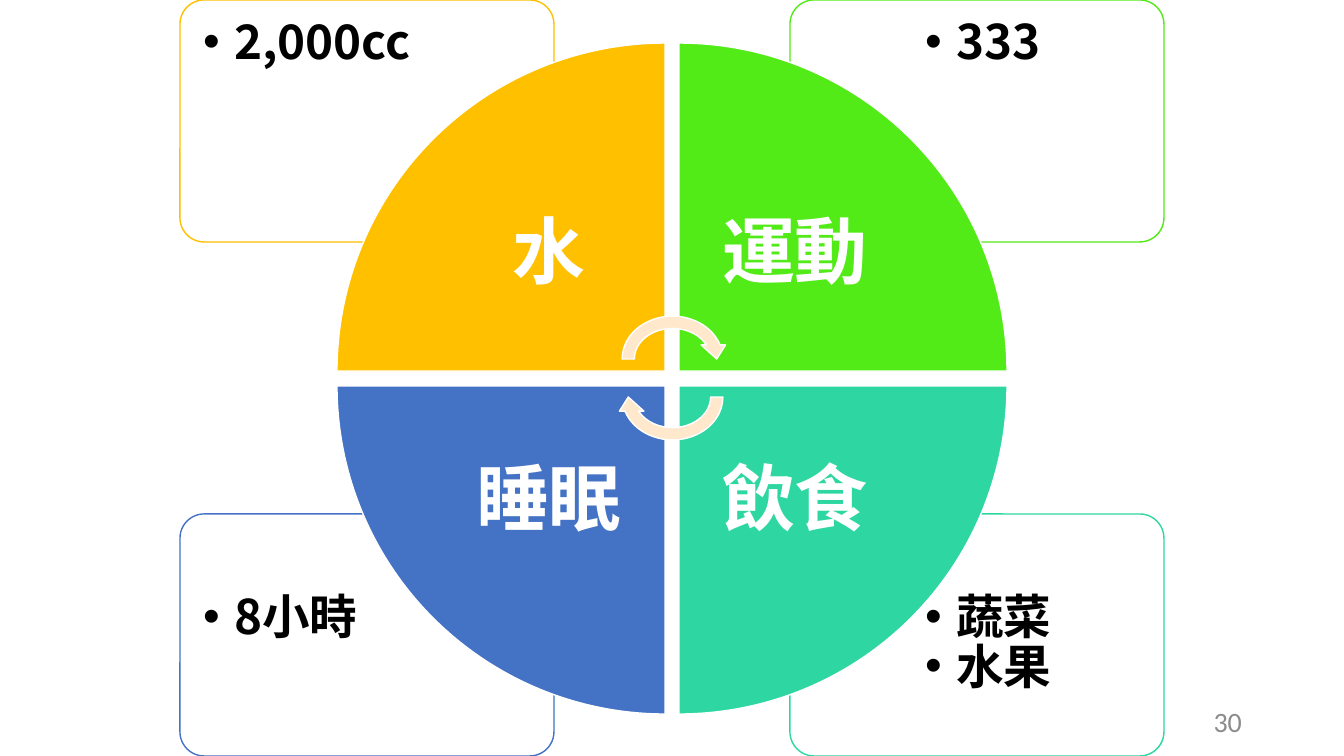
"""Build a slide of four health habits around a wheel."""
import pptx
import pptx.util
import pptx.dml.color
import pptx.enum.shapes
import pptx.enum.text
import pptx.oxml.ns
import lxml.etree

PX = 9144000 / 1008
FONT = "Noto Sans CJK SC"
HUES = {
    "gold": "FFC000",
    "lime": "53EB17",
    "mint": "2ED7A1",
    "blue": "4472C4",
    "cream": "FFE8CC",
    "white": "FFFFFF",
    "black": "000000",
    "gray": "8C8C8C",
}
HABITS = [
    ("水", ["2,000cc"], "gold", 0, 0, 0),
    ("運動", ["333"], "lime", 1, 0, 90),
    ("飲食", ["蔬菜", "水果"], "mint", 1, 1, 180),
    ("睡眠", ["8小時"], "blue", 0, 1, 270),
]
KINDS = pptx.enum.shapes.MSO_SHAPE
ALIGN = pptx.enum.text.PP_ALIGN
ANCHOR = pptx.enum.text.MSO_ANCHOR


def emu(px):
    """Turn px into EMU."""
    return pptx.util.Emu(round(px * PX))


def tint(hue):
    """Give the colour for a name."""
    return pptx.dml.color.RGBColor.from_string(HUES[hue])


def add_sub(parent, tag, **attrs):
    """Add a drawing element below a parent."""
    return lxml.etree.SubElement(parent, pptx.oxml.ns.qn(tag), attrs)


def add_form(slide, kind, box, fill, line, turn=0):
    """Add a flat preset shape."""
    form = slide.shapes.add_shape(kind, *map(emu, box))
    form.shadow.inherit = False
    form.fill.solid()
    form.fill.fore_color.rgb = tint(fill)
    form.line.color.rgb = tint(line)
    form.line.width = pptx.util.Pt(1)
    form.rotation = turn
    return form


def add_text(slide, box, lines, size, hue, font=FONT, bold=True, align=ALIGN.LEFT,
             anchor=ANCHOR.TOP, inset=(10, 5), space=1.0, after=0, dots=False):
    """Add a text box with one paragraph a line."""
    frame = slide.shapes.add_textbox(*map(emu, box)).text_frame
    frame.word_wrap = True
    frame.vertical_anchor = anchor
    frame.margin_left = frame.margin_right = emu(inset[0])
    frame.margin_top = frame.margin_bottom = emu(inset[1])
    for i, line in enumerate(lines):
        para = frame.paragraphs[0] if i == 0 else frame.add_paragraph()
        if dots:
            props = para._p.get_or_add_pPr()
            props.set("marL", str(emu(31)))
            props.set("indent", str(-emu(31)))
            add_sub(props, "a:buFont", typeface="Arial")
            add_sub(props, "a:buChar", char="•")
        para.alignment = align
        para.line_spacing = space
        para.space_after = pptx.util.Pt(after)
        run = para.add_run()
        run.text = line
        run.font.size = pptx.util.Pt(size)
        run.font.bold = bold
        run.font.color.rgb = tint(hue)
        run.font.name = font
        add_sub(run._r.get_or_add_rPr(), "a:ea", typeface=font)


def add_card(slide, notes, hue, col, row):
    """Add a corner card and its bullets."""
    box = (180 + 610 * col, 514 * row, 374, 242)
    card = add_form(slide, KINDS.ROUNDED_RECTANGLE, box, "white", hue)
    card.adjustments[0] = 0.1
    fill = card._element.spPr.find(pptx.oxml.ns.qn("a:solidFill"))
    add_sub(fill[0], "a:alpha", val="90000")
    add_text(slide, (185 + 722 * col, 5 + 575 * row, 251, 170), notes, 34, "black",
             inset=(18, 18), space=0.81, after=2, dots=True)


def add_wedge(slide, name, hue, col, row, turn):
    """Add a quarter of the wheel and its name."""
    box = (337 + 342 * col, 43 + 343 * row, 328, 328)
    add_form(slide, KINDS.PIE_WEDGE, box, hue, "white", turn)
    add_text(slide, (433 + 246 * col, 139 + 247 * row, 232, 232), [name], 52, "white",
             align=ALIGN.CENTER, anchor=ANCHOR.MIDDLE, inset=(40, 40), space=0.9)


def main():
    """Build and save the slide."""
    deck = pptx.Presentation()
    deck.slide_width, deck.slide_height = emu(1344), emu(756)
    slide = deck.slides.add_slide(deck.slide_layouts[6])
    for name, notes, hue, col, row, turn in reversed(HABITS):
        add_card(slide, notes, hue, col, row)
    for name, notes, hue, col, row, turn in HABITS:
        add_wedge(slide, name, hue, col, row, turn)
    for top, turn in ((310, 0), (348, 180)):
        add_form(slide, KINDS.CIRCULAR_ARROW, (616, top, 113, 98), "cream", "white", turn)
    add_text(slide, (950, 701, 302, 40), ["30"], 20, "gray", font="Calibri", bold=False,
             align=ALIGN.RIGHT, anchor=ANCHOR.MIDDLE)
    deck.save("out.pptx")


if __name__ == "__main__":
    main()
